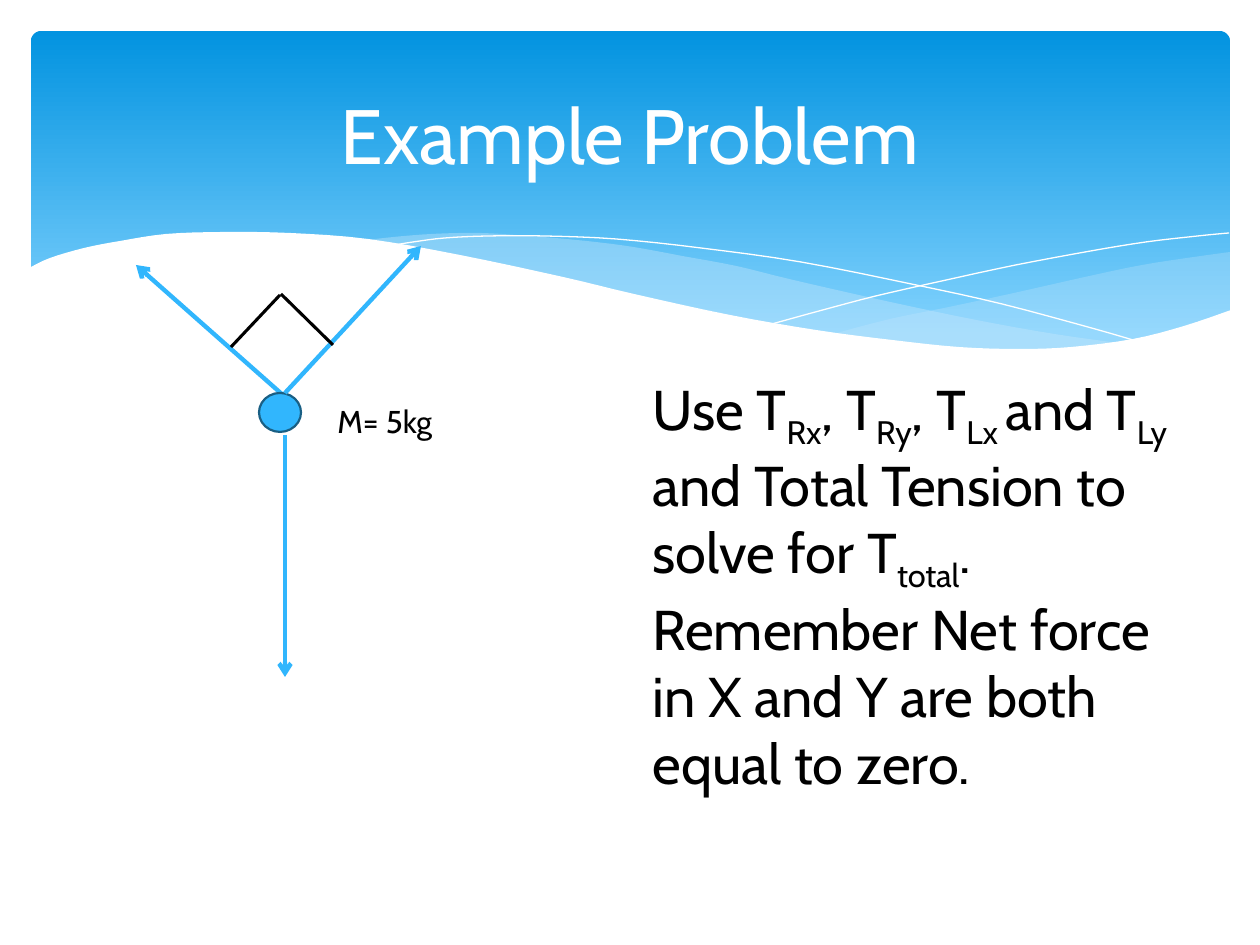
"""Build the "Example Problem" slide: a tension diagram beside its task."""
from lxml.etree import SubElement
from pptx import Presentation
from pptx.dml.color import RGBColor
from pptx.enum.shapes import MSO_CONNECTOR, MSO_SHAPE
from pptx.enum.text import MSO_ANCHOR, MSO_AUTO_SIZE, PP_ALIGN
from pptx.oxml.ns import qn
from pptx.util import Pt

FONT = "Cabin"
WHITE = RGBColor(0xFF, 0xFF, 0xFF)
BLACK = RGBColor(0, 0, 0)
SKY = RGBColor(0x31, 0xB6, 0xFD)
NAVY = RGBColor(0x19, 0x5F, 0x84)
BANNER_TOP = RGBColor(0x02, 0x93, 0xE0)
BANNER_BOTTOM = RGBColor(0x83, 0xD3, 0xFE)
MIST = RGBColor(0xC6, 0xE7, 0xFC)

TITLE = "Example Problem"
MASS = "M= 5kg"
TASK = [
    [("Use T", "Rx"), (", T", "Ry"), (", T", "Lx "), ("and T", "Ly "),
     ("and Total Tension to solve for T", "total"), (".", "")],
    [("Remember Net force in X and Y are both equal to zero.", "")],
]

RIGHT_WAVE = [
    [(1230, 252), (1194, 257), (1142, 265), (1085, 277), (1014, 293), (949, 307),
     (890, 319), (833, 334)],
    [(833, 334), (888, 342), (938, 346), (998, 349), (1050, 349), (1098, 346),
     (1140, 339), (1178, 330), (1213, 318), (1230, 311)],
]
MIDDLE_WAVE = [
    [(1125, 344), (1054, 334), (976, 320), (890, 302), (793, 280), (736, 266),
     (682, 256), (633, 247), (586, 241), (529, 236), (479, 233), (433, 234),
     (394, 237), (360, 241)],
    [(360, 241), (431, 251), (509, 266), (566, 280), (668, 302), (757, 321),
     (838, 335), (911, 343), (974, 349), (1031, 350), (1081, 349), (1125, 344)],
]
FALLING_THREAD = [
    [(389, 246), (413, 242), (445, 238), (488, 236), (545, 236), (616, 239),
     (701, 248), (801, 262), (916, 285), (1002, 304), (1095, 329), (1143, 343)],
]
RISING_THREAD = [
    [(772, 324), (823, 310), (876, 296), (942, 281), (1016, 265), (1091, 251),
     (1146, 242), (1198, 236), (1229, 233)],
]
WHITE_WAVE = [
    [(1231, 310), (1184, 326), (1133, 339), (1071, 347), (1019, 349), (959, 347),
     (892, 340), (816, 330), (730, 315), (634, 294), (563, 277), (460, 255),
     (368, 239), (290, 233), (223, 232), (166, 234), (120, 241), (84, 248),
     (50, 258), (29, 268)],
    [(29, 415), (1231, 415)],
]

WEIGHT = ((285, 435), (285, 677))
LEFT_TENSION = ((284, 396), (136, 265))
RIGHT_TENSION = ((285, 393), (421, 246))
RIGHT_ANGLE = [((231, 347), (280, 295)), ((333, 345), (281, 294))]


def px(length):
    return round(length * 914400 / 126)


def box(*lengths):
    return [px(length) for length in lengths]


def smooth(knots, steps=4):
    """Return points on a Catmull-Rom curve through the knots."""
    padded = [knots[0], *knots, knots[-1]]
    points = [knots[0]]
    for a, b, c, d in zip(padded, padded[1:], padded[2:], padded[3:]):
        for step in range(1, steps + 1):
            t = step / steps
            points.append(tuple(
                q + t / 2 * (r - p + t * (2 * p - 5 * q + 4 * r - s
                                          + t * (3 * (q - r) + s - p)))
                for p, q, r, s in zip(a, b, c, d)))
    return points


def add_curve(shapes, edges, closed):
    points = [box(*point) for edge in edges for point in smooth(edge)]
    builder = shapes.build_freeform(*points[0], scale=1.0)
    builder.add_line_segments(points[1:], close=closed)
    curve = builder.convert_to_shape()
    curve.shadow.inherit = False
    return curve


def add_wave(shapes, edges, color, opacity=100):
    wave = add_curve(shapes, edges, True)
    wave.fill.solid()
    wave.fill.fore_color.rgb = color
    wave.line.fill.background()
    if opacity < 100:
        tint = wave.fill._xPr.find(".//" + qn("a:srgbClr"))
        SubElement(tint, qn("a:alpha"), val=str(opacity * 1000))


def add_thread(shapes, edges):
    thread = add_curve(shapes, edges, False)
    thread.fill.background()
    thread.line.color.rgb = WHITE
    thread.line.width = Pt(0)


def add_line(shapes, ends, color, width, arrow=False):
    start, end = ends
    line = shapes.add_connector(MSO_CONNECTOR.STRAIGHT, *box(*start, *end))
    line.line.color.rgb = color
    line.line.width = Pt(width)
    if arrow:
        SubElement(line.line._get_or_add_ln(), qn("a:tailEnd"), type="arrow")
    SubElement(line._element.spPr, qn("a:effectLst"))


def style(paragraph, size, color):
    paragraph.font.name = FONT
    paragraph.font.size = Pt(size)
    paragraph.font.color.rgb = color


def add_text(shapes, place, paragraphs, size):
    frame = shapes.add_textbox(*box(*place)).text_frame
    frame.word_wrap = True
    frame.auto_size = MSO_AUTO_SIZE.SHAPE_TO_FIT_TEXT
    for index, parts in enumerate(paragraphs):
        paragraph = frame.add_paragraph() if index else frame.paragraphs[0]
        style(paragraph, size, BLACK)
        for words, subscript in parts:
            paragraph.add_run().text = words
            if subscript:
                run = paragraph.add_run()
                run.text = subscript
                run._r.get_or_add_rPr().set("baseline", "-25000")


def add_backdrop(shapes):
    banner = shapes.add_shape(MSO_SHAPE.ROUNDED_RECTANGLE, *box(31, 31, 1199, 340))
    banner.adjustments[0] = 0.03
    banner.shadow.inherit = False
    banner.line.fill.background()
    banner.fill.gradient()
    banner.fill.gradient_angle = 270
    stops = zip(banner.fill.gradient_stops, (0, 0.9), (BANNER_TOP, BANNER_BOTTOM))
    for stop, position, color in stops:
        stop.position = position
        stop.color.rgb = color
    add_wave(shapes, RIGHT_WAVE, MIST, 29)
    add_wave(shapes, MIDDLE_WAVE, MIST, 40)
    add_thread(shapes, FALLING_THREAD)
    add_thread(shapes, RISING_THREAD)
    add_wave(shapes, WHITE_WAVE, WHITE)


def place_title(shapes):
    title = shapes.title
    title.left, title.top, title.width, title.height = box(63, 47, 1134, 173)
    title.text_frame.text = TITLE
    title.text_frame.vertical_anchor = MSO_ANCHOR.MIDDLE
    heading = title.text_frame.paragraphs[0]
    heading.alignment = PP_ALIGN.CENTER
    style(heading, 44, WHITE)
    shapes._spTree.append(title._element)


def add_diagram(shapes):
    add_line(shapes, WEIGHT, SKY, 2.5, arrow=True)
    add_line(shapes, LEFT_TENSION, SKY, 2.5, arrow=True)
    mass = shapes.add_shape(MSO_SHAPE.OVAL, *box(259, 393, 42, 39))
    mass.shadow.inherit = False
    mass.fill.solid()
    mass.fill.fore_color.rgb = SKY
    mass.line.color.rgb = NAVY
    mass.line.width = Pt(1.25)
    add_line(shapes, RIGHT_TENSION, SKY, 2.5, arrow=True)
    add_text(shapes, (325, 396, 158, 50), [[(MASS, "")]], 18)
    for side in RIGHT_ANGLE:
        add_line(shapes, side, BLACK, 1.75)


def main():
    deck = Presentation()
    deck.slide_width, deck.slide_height = box(1260, 945)
    shapes = deck.slides.add_slide(deck.slide_layouts[5]).shapes
    add_backdrop(shapes)
    place_title(shapes)
    add_text(shapes, (640, 368, 546, 420), TASK, 32)
    add_diagram(shapes)
    deck.save("out.pptx")


if __name__ == "__main__":
    main()
